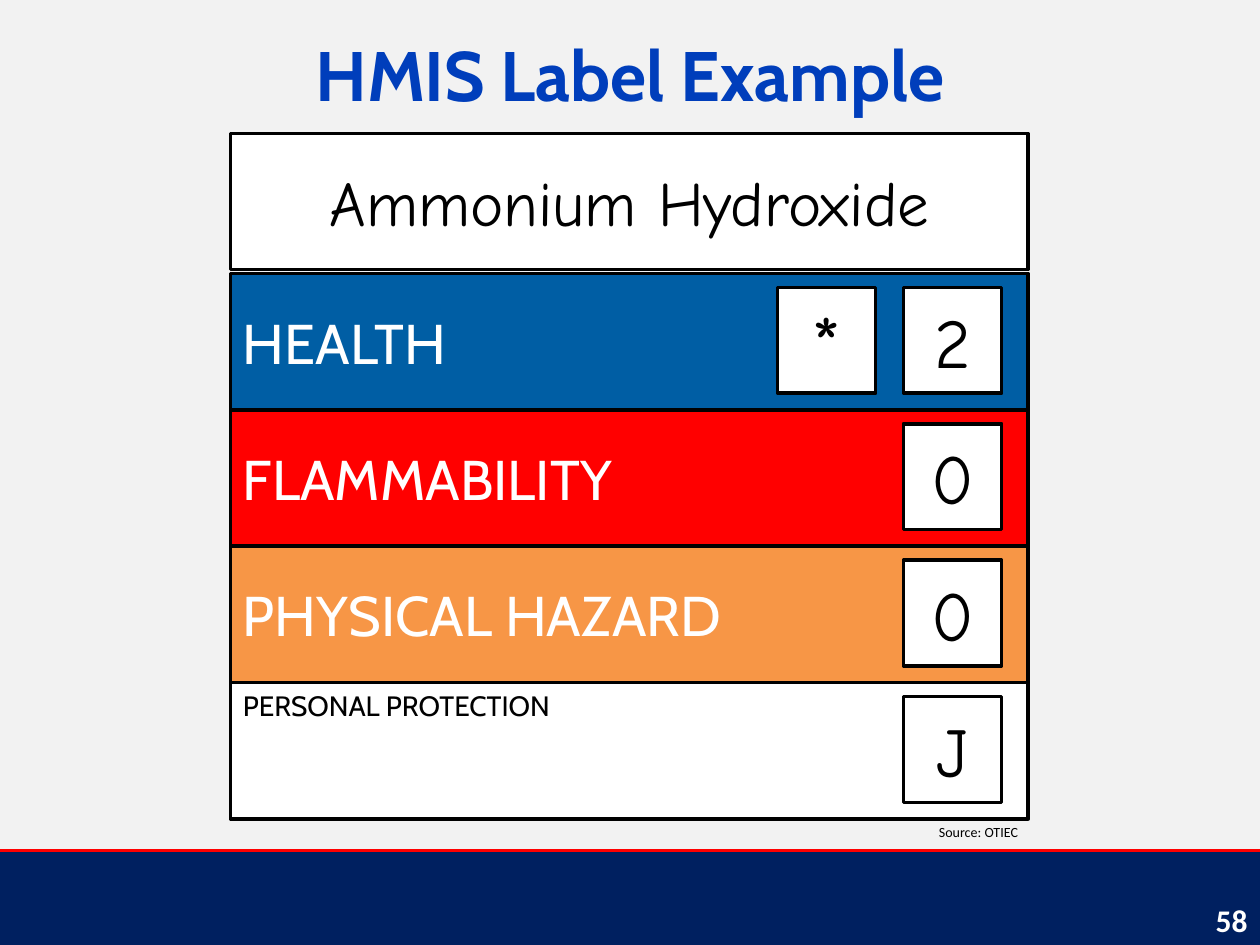
import pptx
import pptx.dml.color
import pptx.enum.shapes
import pptx.enum.text
import pptx.oxml.ns
import pptx.util
from lxml import etree

Inches = pptx.util.Inches
ALIGN = pptx.enum.text.PP_ALIGN
ANCHOR = pptx.enum.text.MSO_ANCHOR

TITLE = "HMIS Label Example"
CHEMICAL = "Ammonium Hydroxide"
SOURCE = "Source: OTIEC"
PAGE_NUMBER = "58"

# heading, band colour, text colour, heading size, anchor, ratings from right to left
HAZARDS = [
    ("HEALTH", "health", "white", "hazard", ANCHOR.MIDDLE, ["2", "*"]),
    ("FLAMMABILITY", "flammability", "white", "hazard", ANCHOR.MIDDLE, ["0"]),
    ("PHYSICAL HAZARD", "physical", "white", "hazard", ANCHOR.MIDDLE, ["0"]),
    ("PERSONAL PROTECTION", "white", "black", "protection", ANCHOR.TOP, ["J"]),
]

THEME = {
    "colors": {
        "background": "F2F2F2", "footer": "002060", "title": "003EBB",
        "health": "005EA4", "flammability": "FF0000", "physical": "F79646",
        "rule": "FF0000", "white": "FFFFFF", "black": "000000",
    },
    "sizes": {
        "title": 40, "chemical": 36, "hazard": 32, "protection": 16,
        "rating": 40, "asterisk": 44, "source": 8, "page": 18,
    },
    "fonts": {"label": "Cabin", "handwritten": "Comic Neue", "small": "Calibri"},
    "line": 2,
}

SLIDE_W, SLIDE_H = 10, 7.5
FOOTER_TOP = 6.75
LABEL_LEFT, LABEL_W = 1.83, 6.33
CHEMICAL_TOP, BAND_H = 1.06, 1.08
BANDS_TOP, BANDS_BOTTOM = 2.17, 6.5
RATING_W, RATING_H, RATING_LEFT, RATING_STEP = 0.78, 0.84, 7.17, 1.0


def color(name):
    return pptx.dml.color.RGBColor.from_string(THEME["colors"][name])


def write(shape, text, size, font, ink, align=ALIGN.LEFT, anchor=ANCHOR.MIDDLE, bold=False):
    frame = shape.text_frame
    frame.text = text
    frame.word_wrap = True
    frame.vertical_anchor = anchor
    paragraph = frame.paragraphs[0]
    paragraph.alignment = align
    run_font = paragraph.runs[0].font
    run_font.size = pptx.util.Pt(THEME["sizes"][size])
    run_font.name = THEME["fonts"][font]
    run_font.color.rgb = color(ink)
    run_font.bold = bold


def add_box(shapes, left, top, width, height, fill, outlined=True):
    box = shapes.add_shape(pptx.enum.shapes.MSO_SHAPE.RECTANGLE, Inches(left),
                           Inches(top), Inches(width), Inches(height))
    box.shadow.inherit = False
    box.fill.solid()
    box.fill.fore_color.rgb = color(fill)
    if outlined:
        box.line.color.rgb = color("black")
        box.line.width = pptx.util.Pt(THEME["line"])
    else:
        box.line.fill.background()
    return box


def add_footer(slide):
    add_box(slide.shapes, 0, FOOTER_TOP, SLIDE_W, SLIDE_H - FOOTER_TOP, "footer", outlined=False)
    rule = slide.shapes.add_connector(pptx.enum.shapes.MSO_CONNECTOR.STRAIGHT, 0,
                                      Inches(FOOTER_TOP), Inches(SLIDE_W), Inches(FOOTER_TOP))
    rule.line.color.rgb = color("rule")
    rule.line.width = pptx.util.Pt(THEME["line"])
    etree.SubElement(rule._element.spPr, pptx.oxml.ns.qn("a:effectLst"))
    page = slide.shapes.add_textbox(Inches(7.67), Inches(7.1), Inches(2.33), Inches(0.4))
    write(page, PAGE_NUMBER, "page", "small", "white", ALIGN.RIGHT, ANCHOR.TOP, bold=True)


def add_label(slide):
    label = slide.shapes.add_group_shape().shapes
    pitch = (BANDS_BOTTOM - BANDS_TOP) / len(HAZARDS)
    for row, (heading, fill, ink, size, anchor, ratings) in enumerate(HAZARDS):
        top = BANDS_TOP + row * pitch
        band = add_box(label, LABEL_LEFT, top, LABEL_W, pitch, fill)
        write(band, heading, size, "label", ink, anchor=anchor)
        for column, rating in enumerate(ratings):
            square = add_box(label, RATING_LEFT - column * RATING_STEP,
                             top + (pitch - RATING_H) / 2 - 0.01, RATING_W, RATING_H, "white")
            write(square, rating, "asterisk" if rating == "*" else "rating",
                  "handwritten", "black", ALIGN.CENTER)
    chemical = add_box(label, LABEL_LEFT, CHEMICAL_TOP, LABEL_W, BAND_H, "white")
    write(chemical, CHEMICAL, "chemical", "handwritten", "black", ALIGN.CENTER)


def main():
    deck = pptx.Presentation()
    deck.slide_width, deck.slide_height = Inches(SLIDE_W), Inches(SLIDE_H)
    slide = deck.slides.add_slide(deck.slide_layouts[5])
    slide.background.fill.solid()
    slide.background.fill.fore_color.rgb = color("background")

    title = slide.shapes.title
    title.left, title.top = Inches(0.25), Inches(0.12)
    title.width, title.height = Inches(9.5), Inches(0.92)
    write(title, TITLE, "title", "label", "title", ALIGN.CENTER, bold=True)

    add_footer(slide)
    source = slide.shapes.add_textbox(Inches(7.01), Inches(6.49), Inches(1.17), Inches(0.24))
    write(source, SOURCE, "source", "small", "black", ALIGN.RIGHT, ANCHOR.TOP)
    add_label(slide)
    deck.save("out.pptx")


if __name__ == "__main__":
    main()
